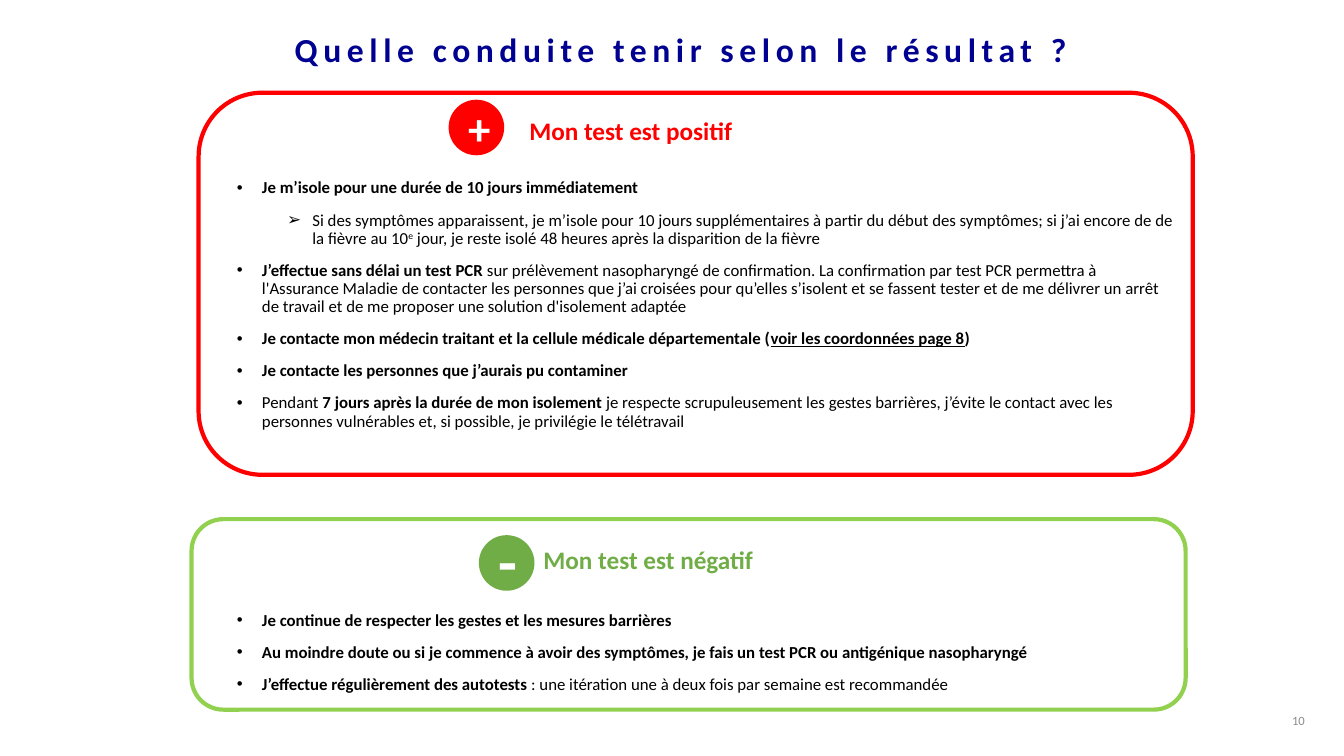
from dataclasses import dataclass

from lxml.etree import SubElement
from pptx import Presentation
from pptx.dml.color import RGBColor
from pptx.enum.shapes import MSO_SHAPE as Shape
from pptx.enum.text import MSO_ANCHOR as Anchor, PP_ALIGN as Align
from pptx.oxml.ns import qn
from pptx.util import Pt

TITLE = "Quelle conduite tenir selon le résultat ?"
PAGE_NUMBER = "10"

POSITIVE_ADVICE = [
    (0, [("Je m’isole pour une durée de 10 jours immédiatement", "b")]),
    (1, [("Si des symptômes apparaissent, je m’isole pour 10 jours supplémentaires à partir "
          "du début des symptômes; si j’ai encore de de la fièvre au 10", ""),
         ("e", "^"),
         (" jour, je reste isolé 48 heures après la disparition de la fièvre", "")]),
    (0, [("J’effectue sans délai un test PCR ", "b"),
         ("sur prélèvement nasopharyngé de confirmation. La confirmation par test PCR "
          "permettra à l'Assurance Maladie de contacter les personnes que j’ai croisées pour "
          "qu’elles s’isolent et se fassent tester et de me délivrer un arrêt de travail et "
          "de me proposer une solution d'isolement adaptée", "")]),
    (0, [("Je contacte mon médecin traitant et la cellule médicale départementale (", "b"),
         ("voir les coordonnées page 8", "bu"),
         (")", "b")]),
    (0, [("Je contacte les personnes que j’aurais pu contaminer", "b")]),
    (0, [("Pendant ", ""),
         ("7 jours après la durée de mon isolement ", "b"),
         ("je respecte scrupuleusement les gestes barrières, j’évite le contact avec les "
          "personnes vulnérables et, si possible, je privilégie le télétravail", "")]),
]
NEGATIVE_ADVICE = [
    (0, [("Je continue de respecter les gestes et les mesures barrières", "b")]),
    (0, [("Au moindre doute ou si je commence à avoir des symptômes, je fais un test PCR ou "
          "antigénique nasopharyngé", "b")]),
    (0, [("J’effectue régulièrement des autotests ", "b"),
         (": une itération une à deux fois par semaine est recommandée", "")]),
]


@dataclass(frozen=True)
class Theme:
    font: str = "Calibri"
    navy: str = "000091"
    red: str = "FF0000"
    green: str = "70AD47"
    lime: str = "92D050"
    black: str = "000000"
    white: str = "FFFFFF"
    grey: str = "8C8C8C"
    title: int = 24
    heading: int = 18
    body: int = 12
    plus: int = 32
    minus: int = 44
    page: int = 9
    border: int = 3


THEME = Theme()
PX = 9144
BADGE = 51
INDENT = 25
BULLETS = [("•", 25), ("➢", 75)]

RESULTS = [
    dict(sign="+", sign_size=THEME.plus, sign_bottom=5, color=THEME.red, border=THEME.red,
         badge=(447, 101), frame=(197, 92, 986, 379), heading="Mon test est positif",
         heading_box=(521, 110, 310, 39), advice=POSITIVE_ADVICE, advice_box=(225, 173, 952, 262)),
    dict(sign="-", sign_size=THEME.minus, sign_bottom=12, color=THEME.green, border=THEME.lime,
         badge=(477, 533), frame=(190, 515, 986, 189), heading="Mon test est négatif",
         heading_box=(535, 539, 310, 32), advice=NEGATIVE_ADVICE, advice_box=(225, 602, 952, 93)),
]


def px(*lengths):
    return [length * PX for length in lengths]


def style(paragraph, size, color, bold=None):
    font = paragraph.font
    font.name, font.size, font.bold = THEME.font, Pt(size), bold
    font.color.rgb = RGBColor.from_string(color)


def write_line(frame, text, size, color, bold=True, align=Align.LEFT):
    frame.word_wrap = True
    frame.vertical_anchor = Anchor.MIDDLE
    paragraph = frame.paragraphs[0]
    paragraph.alignment = align
    run = paragraph.add_run()
    run.text = text
    style(paragraph, size, color, bold)
    return run


def add_outline(slide, kind, box, border, fill=None):
    shape = slide.shapes.add_shape(kind, *px(*box))
    shape.shadow.inherit = False
    if fill:
        shape.fill.solid()
        shape.fill.fore_color.rgb = RGBColor.from_string(fill)
    else:
        shape.fill.background()
    shape.line.color.rgb = RGBColor.from_string(border)
    shape.line.width = Pt(THEME.border)
    return shape


def add_label(slide, box, *line, side=10, **options):
    frame = slide.shapes.add_textbox(*px(*box)).text_frame
    frame.margin_left = frame.margin_right = side * PX
    return write_line(frame, *line, **options)


def add_bullet(paragraph, level):
    symbol, margin = BULLETS[level]
    properties = paragraph._p.get_or_add_pPr()
    properties.set("marL", str(margin * PX))
    properties.set("indent", str(-INDENT * PX))
    SubElement(properties, qn("a:buFont")).set("typeface", "Arial")
    SubElement(properties, qn("a:buChar")).set("char", symbol)


def add_advice(slide, box, advice):
    frame = slide.shapes.add_textbox(*px(*box)).text_frame
    frame.word_wrap = True
    for index, (level, parts) in enumerate(advice):
        paragraph = frame.add_paragraph() if index else frame.paragraphs[0]
        paragraph.level = level
        paragraph.line_spacing = 0.9
        paragraph.space_before = Pt(10)
        add_bullet(paragraph, level)
        style(paragraph, THEME.body, THEME.black)
        for text, marks in parts:
            run = paragraph.add_run()
            run.text = text
            run.font.bold = "b" in marks
            if "u" in marks:
                run.font.underline = True
            if "^" in marks:
                run._r.get_or_add_rPr().set("baseline", "30000")


def main():
    deck = Presentation()
    deck.slide_width, deck.slide_height = px(1333, 750)
    slide = deck.slides.add_slide(deck.slide_layouts[6])

    title = add_label(slide, (29, 12, 1293, 74), TITLE, THEME.title, THEME.navy,
                      align=Align.CENTER)
    title._r.get_or_add_rPr().set("spc", "400")

    for result in RESULTS:
        color = result["color"]
        badge = add_outline(slide, Shape.OVAL, (*result["badge"], BADGE, BADGE), color, color)
        badge.text_frame.margin_bottom = result["sign_bottom"] * PX
        write_line(badge.text_frame, result["sign"], result["sign_size"], THEME.white,
                   align=Align.CENTER)
        add_outline(slide, Shape.ROUNDED_RECTANGLE, result["frame"], result["border"])
        add_advice(slide, result["advice_box"], result["advice"])
        add_label(slide, result["heading_box"], result["heading"], THEME.heading, color, side=4)

    add_label(slide, (1004, 695, 300, 40), PAGE_NUMBER, THEME.page, THEME.grey,
              bold=False, align=Align.RIGHT)
    deck.save("out.pptx")


if __name__ == "__main__":
    main()
